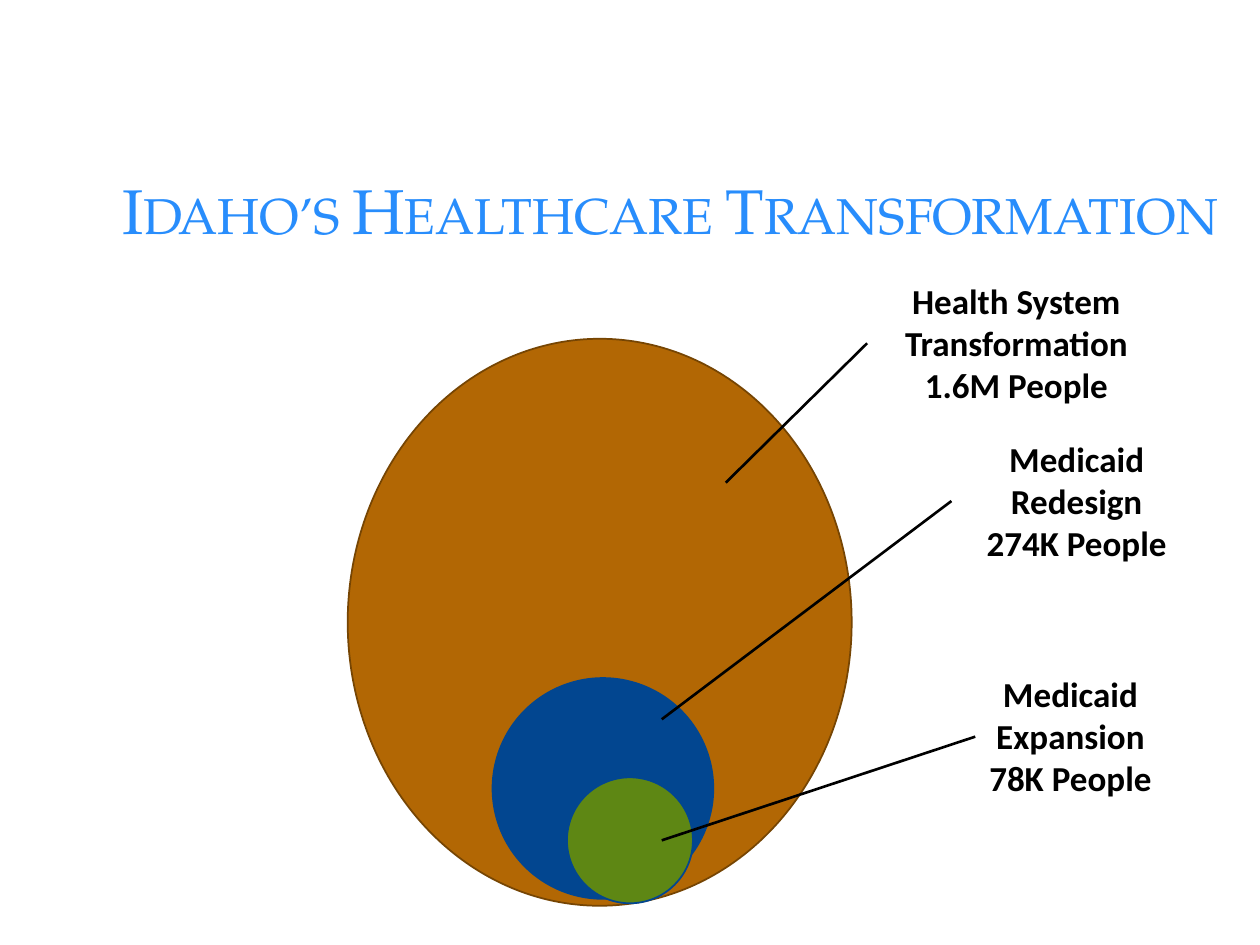
from dataclasses import dataclass

from lxml import etree
from pptx import Presentation
from pptx import util as u
from pptx.dml.color import RGBColor
from pptx.enum import shapes, text
from pptx.oxml.ns import qn

BODY_FONT = "Calibri"
TITLE_FONT = "TeX Gyre Pagella"
LABEL_HEIGHT = 2.82
LEFT_SIDE = 1


@dataclass
class Population:
    """One group of people; lengths in centimetres."""
    name: str
    count: str
    circle: tuple[float, float, float, float]
    fill: str
    outline: str
    label: tuple[float, float, float]  # left, top, width
    target: tuple[float, float]  # where the leader line ends


POPULATIONS = [
    Population("Health System Transformation", "1.6M People",
               (7.01, 6.83, 10.16, 11.43), "B26704", "764503",
               (17.48, 5.51, 6.02), (14.63, 9.73)),
    Population("Medicaid Redesign", "274K People",
               (9.93, 13.67, 4.45, 4.45), "024690", "024690",
               (19.18, 8.69, 5.05), (13.34, 14.5)),
    Population("Medicaid Expansion", "78K People",
               (11.43, 15.67, 2.54, 2.54), "5E8714", "024690",
               (19.66, 13.44, 3.84), (13.34, 16.94)),
]


def color(value: str) -> RGBColor:
    return RGBColor.from_string(value)


def set_title(page, wording: str) -> None:
    title = page.shapes.title
    title.left, title.top = u.Cm(2.21), u.Cm(3.3)
    title.width, title.height = u.Cm(22.78), u.Cm(1.83)
    frame = title.text_frame
    frame.text = wording
    frame.word_wrap = True
    frame.auto_size = text.MSO_AUTO_SIZE.NONE
    frame.vertical_anchor = text.MSO_ANCHOR.BOTTOM
    para = frame.paragraphs[0]
    para.alignment = text.PP_ALIGN.LEFT
    para.line_spacing = 0.9
    font = para.runs[0].font
    font.name, font.size = TITLE_FONT, u.Pt(36)
    font.color.rgb = color("288DFC")
    font._element.set("cap", "small")


def draw_circle(page, group: Population) -> None:
    circle = page.shapes.add_shape(
        shapes.MSO_SHAPE.OVAL, *(u.Cm(length) for length in group.circle))
    circle.shadow.inherit = False
    circle.fill.solid()
    circle.fill.fore_color.rgb = color(group.fill)
    circle.line.color.rgb = color(group.outline)
    circle.line.width = u.Pt(1)


def draw_label(page, group: Population):
    left, top, width = group.label
    box = page.shapes.add_textbox(
        u.Cm(left), u.Cm(top), u.Cm(width), u.Cm(LABEL_HEIGHT))
    frame = box.text_frame
    frame.word_wrap = True
    frame.auto_size = text.MSO_AUTO_SIZE.SHAPE_TO_FIT_TEXT
    frame.text = f"{group.name}\n{group.count}"
    for para in frame.paragraphs:
        para.alignment = text.PP_ALIGN.CENTER
        font = para.runs[0].font
        font.name, font.size, font.bold = BODY_FONT, u.Pt(20), True
        font.color.rgb = color("000000")
    return box


def draw_leader(page, box, target: tuple[float, float]) -> None:
    """Join the left side of a label to its circle."""
    leader = page.shapes.add_connector(
        shapes.MSO_CONNECTOR.STRAIGHT, box.left, box.top + box.height // 2,
        u.Cm(target[0]), u.Cm(target[1]))
    leader.begin_connect(box, LEFT_SIDE)
    leader.line.color.rgb = color("000000")
    leader.line.width = u.Pt(1.5)
    etree.SubElement(leader._element.spPr, qn("a:effectLst"))


def main() -> None:
    deck = Presentation()
    deck.slide_width, deck.slide_height = u.Cm(25.4), u.Cm(19.05)
    page = deck.slides.add_slide(deck.slide_layouts.get_by_name("Title Only"))
    set_title(page, "Idaho’s Healthcare Transformation")
    for group in POPULATIONS:
        draw_circle(page, group)
    for group in POPULATIONS:
        box = draw_label(page, group)
        draw_leader(page, box, group.target)
    deck.save("out.pptx")


if __name__ == "__main__":
    main()
